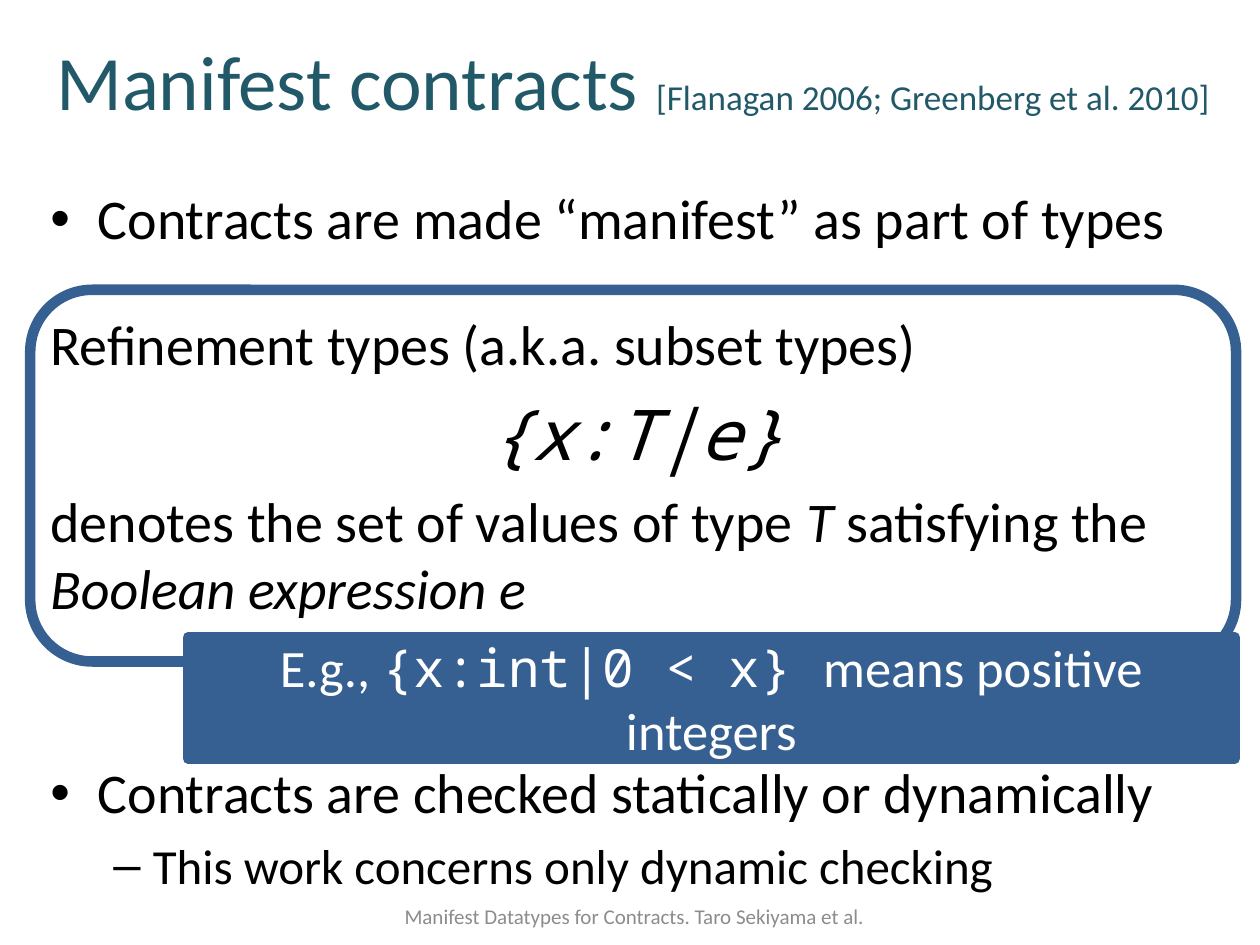
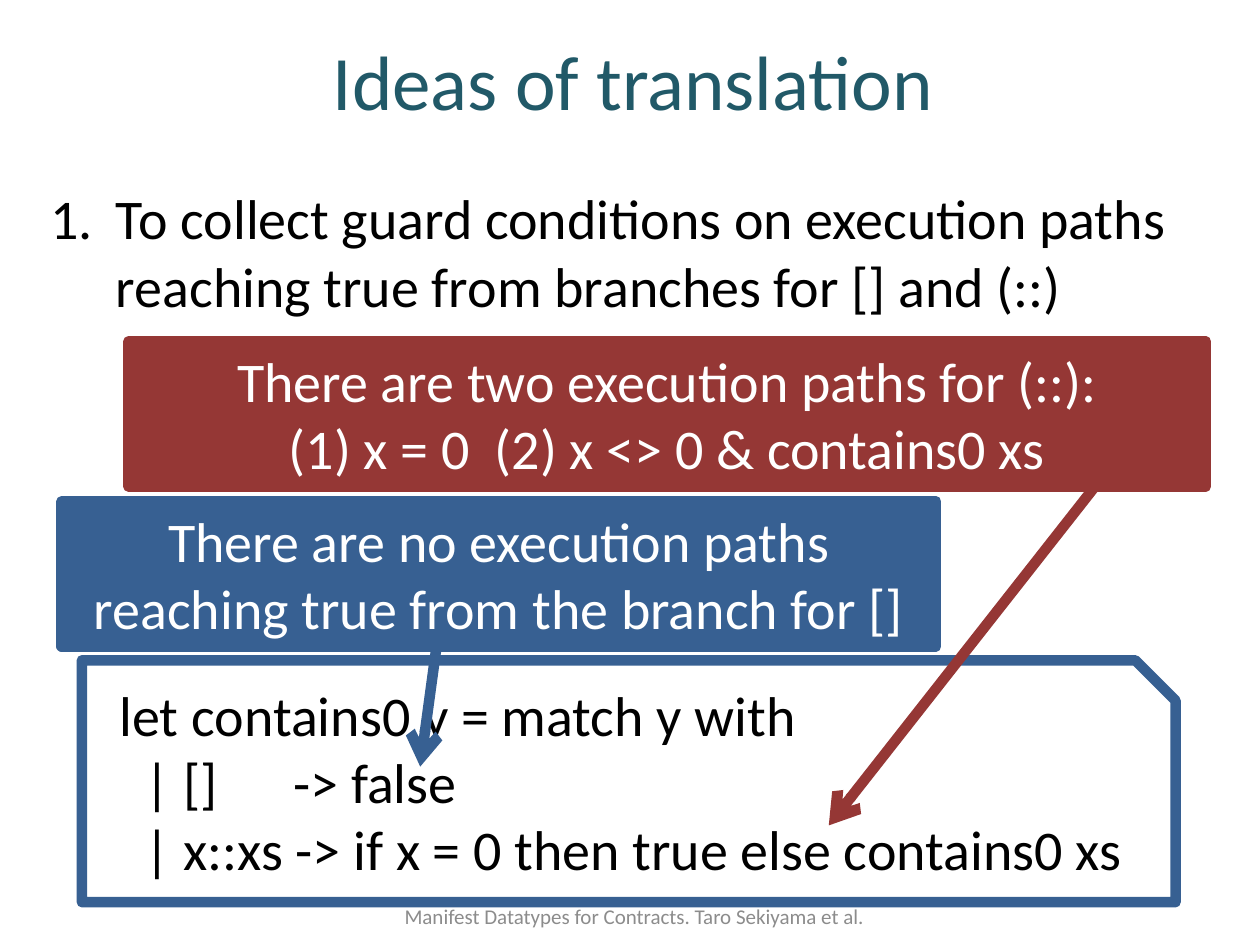
from lxml.etree import SubElement
from pptx import Presentation
from pptx.dml.color import RGBColor
from pptx.enum.shapes import MSO_SHAPE as Shape
from pptx.enum.text import MSO_ANCHOR as Anchor, MSO_AUTO_SIZE as AutoSize, PP_ALIGN as Align
from pptx.oxml.ns import qn
from pptx.util import Inches, Pt

# Shared look
TEAL = RGBColor(0x21, 0x59, 0x68)
BLUE = RGBColor(0x37, 0x60, 0x92)
RED = RGBColor(0x95, 0x37, 0x35)
GREY = RGBColor(0x8C, 0x8C, 0x8C)
BLACK = RGBColor(0, 0, 0)
WHITE = RGBColor(255, 255, 255)
SANS, MONO = "Calibri", "Noto Sans Mono"
FOOTER = "Manifest Datatypes for Contracts. Taro Sekiyama et al."

# Grid of 100 columns by 75 rows
WIDTH, HEIGHT = Inches(10), Inches(7.5)
COLUMN, ROW = WIDTH / 100, HEIGHT / 75
TITLE_AREA = (2.4, 0.1, 95.7, 12.5)
BODY_AREA = (3, 14.1, 95.1, 60.9)
FOOTER_AREA = (27.9, 70.7, 44.9, 4)


def on_grid(left, top, width, height):
    return [round(n * unit) for n, unit in
            zip((left, top, width, height), (COLUMN, ROW, COLUMN, ROW))]


def move(shape, area):
    shape.left, shape.top, shape.width, shape.height = on_grid(*area)


def add_run(paragraph, text, size=32, font=SANS, color=BLACK, italic=False):
    run = paragraph.add_run()
    run.text = text
    run.font.size, run.font.name = Pt(size), font
    run.font.color.rgb, run.font.italic = color, italic


def write(frame, *runs, align=None, before=None, level=0, indent=None,
          number=False, **style):
    """Append a paragraph; a run is a string or a (string, overrides) pair."""
    started = len(frame.paragraphs) > 1 or frame.paragraphs[0].runs
    paragraph = frame.add_paragraph() if started else frame.paragraphs[0]
    paragraph.level = level
    if align is not None:
        paragraph.alignment = align
    if before is not None:
        paragraph.space_before = Pt(before)
    if indent is not None:
        properties = paragraph._p.get_or_add_pPr()
        properties.set("marL", str(round(indent * COLUMN)))
        properties.set("indent", str(-round(indent * COLUMN) if number else 0))
        if number:
            SubElement(properties, qn("a:buFont"), typeface="+mj-lt")
            SubElement(properties, qn("a:buAutoNum"), type="arabicPeriod")
        else:
            SubElement(properties, qn("a:buNone"))
    for run in runs:
        text, overrides = (run, {}) if isinstance(run, str) else run
        add_run(paragraph, text, **{**style, **overrides})


def start_slide(presentation, *title):
    """Add a slide with its title and return it with the body's text frame."""
    slide = presentation.slides.add_slide(presentation.slide_layouts[1])
    heading, body = slide.placeholders
    for placeholder, area, anchor in ((heading, TITLE_AREA, Anchor.MIDDLE),
                                      (body, BODY_AREA, Anchor.TOP)):
        move(placeholder, area)
        placeholder.text_frame.auto_size = AutoSize.NONE
        placeholder.text_frame.vertical_anchor = anchor
    write(heading.text_frame, *title, align=Align.CENTER, size=44, color=TEAL)
    return slide, body.text_frame


def add_footer(slide):
    frame = slide.shapes.add_textbox(*on_grid(*FOOTER_AREA)).text_frame
    frame.word_wrap = True
    frame.vertical_anchor = Anchor.MIDDLE
    write(frame, FOOTER, align=Align.CENTER, size=12, color=GREY)


def add_box(slide, kind, area, color, filled=False):
    box = slide.shapes.add_shape(kind, *on_grid(*area))
    box.shadow.inherit = False
    box.line.color.rgb, box.line.width = color, Pt(6)
    if filled:
        box.fill.solid()
        box.fill.fore_color.rgb = color
    else:
        box.fill.background()
    return box


def add_callout(slide, area, color, leader):
    """Add a filled callout; leader is y, x of its start, then of its tip."""
    callout = add_box(slide, Shape.LINE_CALLOUT_1, area, color, filled=True)
    for index, share in enumerate(leader):
        callout.adjustments[index] = share
    SubElement(callout.line._get_or_add_ln(), qn("a:tailEnd"), type="arrow")
    callout.text_frame.vertical_anchor = Anchor.MIDDLE
    return callout.text_frame


def manifest_contracts(presentation):
    slide, body = start_slide(
        presentation, "Manifest contracts ",
        ("[Flanagan 2006; Greenberg et al. 2010]", {"size": 20}))
    italic = {"italic": True}
    write(body, "Contracts are made “manifest” as part of types")

    # Definition inside the rounded frame
    write(body, "Refinement types (a.k.a. subset types)", indent=0, before=33.5)
    write(body, "{x:T|e}", indent=0, align=Align.CENTER, size=40, font=MONO, italic=True)
    write(body, "denotes the set of values of type ", ("T", italic),
          " satisfying the ", ("Boolean expression e", italic), indent=0)

    # Checking, below the example
    write(body, "Contracts are checked statically or dynamically", before=78.5)
    write(body, "This work concerns only dynamic checking", level=1, size=28)

    add_box(slide, Shape.ROUNDED_RECTANGLE, (2.4, 23, 95.7, 29.5), BLUE)
    example = add_callout(slide, (14.9, 50.6, 83.1, 9.6), BLUE, (0.12, 0.48, 0.2, 0.37))
    write(example, "E.g., ", ("{x:int|0 < x} ", {"font": MONO}),
          "means positive integers", align=Align.CENTER, size=30, color=WHITE)
    add_footer(slide)


def ideas_of_translation(presentation):
    slide, body = start_slide(presentation, "Ideas of translation")
    write(body, "To collect guard conditions on execution paths reaching true "
          "from branches for [] and (::)", indent=5.2, number=True)

    # Code
    code = add_box(slide, Shape.SNIP_1_RECTANGLE, (6.5, 52.4, 86.8, 19.2), BLUE).text_frame
    code.vertical_anchor = Anchor.TOP
    code.margin_top, code.margin_bottom = 0, round(2 * ROW)
    for indent, line in ((2, "let contains0 y = match y with"),
                         (4, "| []      -> false"),
                         (4, "| x::xs -> if x = 0 then true else contains0 xs")):
        write(code, line, indent=indent, align=Align.LEFT)

    # Remarks pointing at the two branches
    remarks = (
        ((4.9, 39.8, 69.4, 11.5), BLUE, (0.94, 0.43, 1.83, 0.41),
         ["There are no execution paths reaching true from the branch for []"]),
        ((10.2, 27.1, 85.5, 11.5), RED, (0.69, 0.93, 3.34, 0.65),
         ["There are two execution paths for (::):",
          "(1) x = 0  (2) x <> 0 & contains0 xs"]),
    )
    for area, color, leader, lines in remarks:
        frame = add_callout(slide, area, color, leader)
        for line in lines:
            write(frame, line, align=Align.CENTER, color=WHITE)
    add_footer(slide)


def main():
    presentation = Presentation()
    presentation.slide_width, presentation.slide_height = WIDTH, HEIGHT
    manifest_contracts(presentation)
    ideas_of_translation(presentation)
    presentation.save("out.pptx")


if __name__ == "__main__":
    main()
